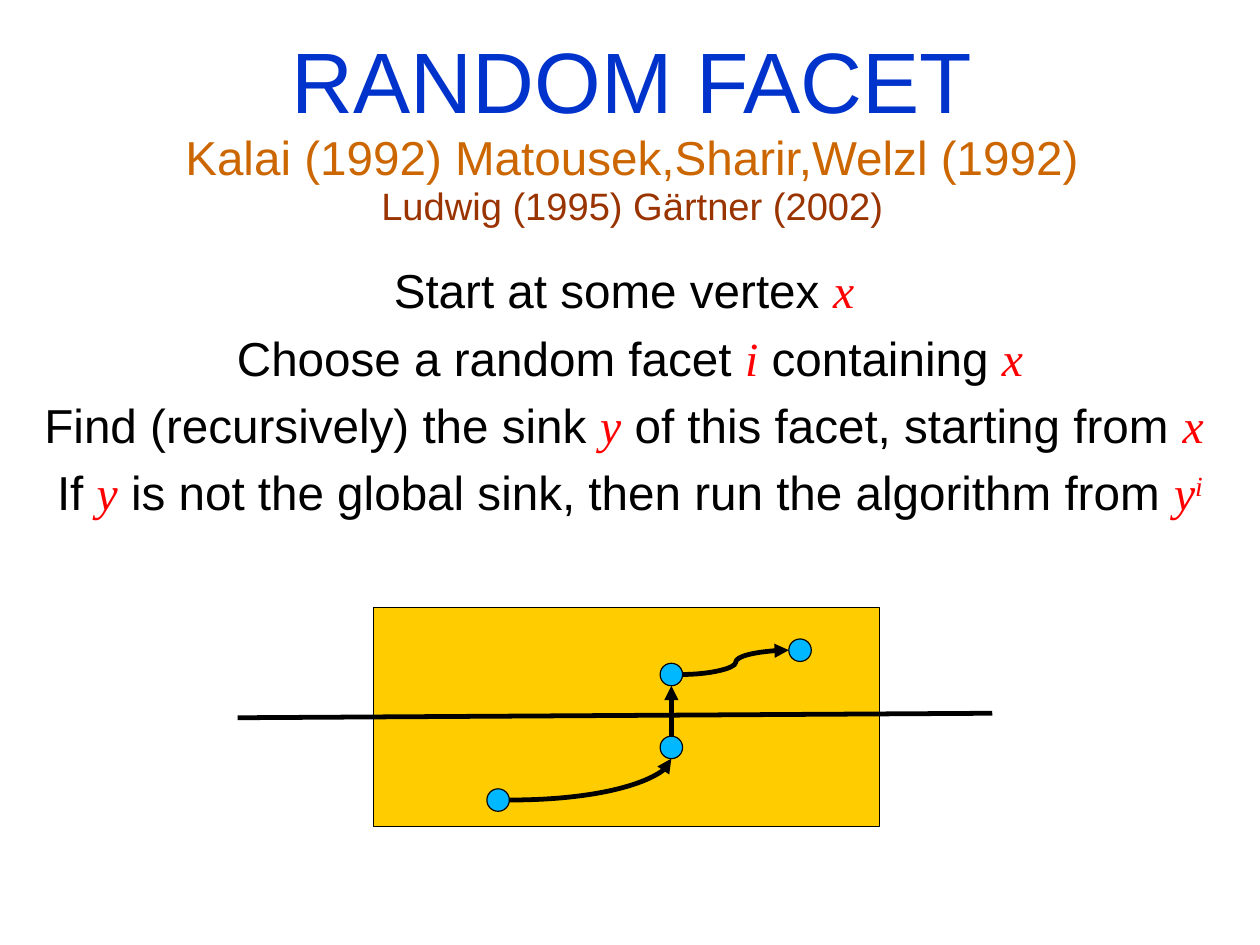
from copy import deepcopy
from dataclasses import dataclass

from lxml import etree
from pptx import Presentation
from pptx.dml.color import RGBColor
from pptx.enum.shapes import MSO_CONNECTOR, MSO_SHAPE
from pptx.enum.text import MSO_ANCHOR, MSO_AUTO_SIZE, PP_ALIGN
from pptx.oxml.ns import qn
from pptx.util import Cm, Pt

RECTANGLE, OVAL = MSO_SHAPE.RECTANGLE, MSO_SHAPE.OVAL
STRAIGHT, CURVE = MSO_CONNECTOR.STRAIGHT, MSO_CONNECTOR.CURVE
CENTER = PP_ALIGN.CENTER
TOP, MIDDLE = MSO_ANCHOR.TOP, MSO_ANCHOR.MIDDLE
NO_FIT = MSO_AUTO_SIZE.NONE

BLACK = RGBColor(0x00, 0x00, 0x00)
BLUE = RGBColor(0x00, 0x33, 0xCC)
ORANGE = RGBColor(0xCC, 0x66, 0x00)
BROWN = RGBColor(0x99, 0x33, 0x00)
RED = RGBColor(0xFF, 0x00, 0x00)
GOLD = RGBColor(0xFF, 0xCC, 0x00)
SKY = RGBColor(0x00, 0xB8, 0xFF)

SANS, SERIF = "Arial", "Times New Roman"
BODY_SIZE = 30
RADIUS = 0.25


@dataclass(frozen=True)
class Span:
    text: str
    size: float = BODY_SIZE
    color: RGBColor = BLACK
    variable: bool = False
    superscript: bool = False


@dataclass(frozen=True)
class Point:
    x: float
    y: float

    def moved(self, right: float = 0, down: float = 0) -> "Point":
        return Point(self.x + right, self.y + down)


@dataclass(frozen=True)
class Link:
    start: Point
    end: Point
    kind: int = STRAIGHT
    arrow: bool = True
    preset: str = ""


def variable(text: str, superscript: bool = False) -> Span:
    return Span(text, color=RED, variable=True, superscript=superscript)


TITLE_LINES = [
    Span("RANDOM FACET", 54, BLUE),
    Span("Kalai (1992) Matousek,Sharir,Welzl (1992)", 30, ORANGE),
    Span("Ludwig (1995) Gärtner (2002)", 24, BROWN),
]
STEPS = [
    [Span("Start at some vertex "), variable("x ")],
    [Span("Choose a random facet "), variable("i"),
     Span(" containing "), variable("x")],
    [Span("Find (recursively) the sink "), variable("y"),
     Span(" of this facet, starting from "), variable("x ")],
    [Span("If "), variable("y"),
     Span(" is not the global sink, then run the algorithm from "),
     variable("y"), variable("i", superscript=True)],
]

START = Point(11.07, 17.78)
FACET_SINK = Point(14.92, 16.61)
NEIGHBOUR = Point(14.92, 14.99)
GLOBAL_SINK = Point(17.78, 14.45)
VERTICES = [START, FACET_SINK, NEIGHBOUR, GLOBAL_SINK]

FACET_LINE = Link(Point(5.28, 15.95), Point(22.05, 15.85), arrow=False)
PATH_LINKS = [
    Link(START.moved(right=RADIUS), FACET_SINK.moved(down=RADIUS),
         CURVE, preset="curvedConnector2"),
    Link(FACET_SINK.moved(down=-RADIUS), NEIGHBOUR.moved(down=RADIUS)),
    Link(NEIGHBOUR.moved(right=RADIUS), GLOBAL_SINK.moved(right=-RADIUS), CURVE),
]


def place(box, left: float, top: float, width: float, height: float) -> None:
    box.left, box.top = Cm(left), Cm(top)
    box.width, box.height = Cm(width), Cm(height)


def add_span(para, span: Span):
    run = para.add_run()
    run.text = span.text
    run.font.name = SERIF if span.variable else SANS
    run.font.size = Pt(span.size)
    run.font.italic = span.variable
    run.font.color.rgb = span.color
    if span.superscript:
        run.font._element.set("baseline", "30000")
    return run


def fill_title(box) -> None:
    place(box, 1.45, 0.81, 25.2, 4.29)
    frame = box.text_frame
    frame.auto_size, frame.vertical_anchor, frame.word_wrap = NO_FIT, MIDDLE, True
    frame.margin_left = frame.margin_right = frame.margin_top = frame.margin_bottom = 0
    para = frame.paragraphs[0]
    para.alignment, para.line_spacing = CENTER, 0.93
    for number, line in enumerate(TITLE_LINES):
        if number:
            # A break takes the font of the line it ends
            para.add_line_break()
            para._p.findall(qn("a:br"))[-1].append(deepcopy(run.font._element))
        run = add_span(para, line)


def fill_steps(box) -> None:
    place(box, 0, 5.82, 28, 5.94)
    frame = box.text_frame
    frame.auto_size, frame.vertical_anchor, frame.word_wrap = NO_FIT, TOP, True
    for number, step in enumerate(STEPS):
        para = frame.add_paragraph() if number else frame.paragraphs[0]
        para.alignment, para.line_spacing = CENTER, 0.9
        para.space_before, para.space_after = Pt(10), Pt(0)
        properties = para._p.get_or_add_pPr()
        properties.set("marL", "0")
        properties.set("indent", "0")
        etree.SubElement(properties, qn("a:buNone"))
        for span in step:
            add_span(para, span)


def add_filled(page, kind: int, corner: Point, width: float, height: float,
               color: RGBColor) -> None:
    shape = page.shapes.add_shape(kind, Cm(corner.x), Cm(corner.y),
                                  Cm(width), Cm(height))
    shape.shadow.inherit = False
    shape.fill.solid()
    shape.fill.fore_color.rgb = color
    shape.line.color.rgb = BLACK
    shape.line.width = Pt(0.75)


def add_link(page, link: Link) -> None:
    connector = page.shapes.add_connector(
        link.kind, Cm(link.start.x), Cm(link.start.y), Cm(link.end.x), Cm(link.end.y))
    connector.line.color.rgb = BLACK
    connector.line.width = Pt(3)
    properties = connector._element.spPr
    if link.preset:
        properties.find(qn("a:prstGeom")).set("prst", link.preset)
    if link.arrow:
        etree.SubElement(properties.find(qn("a:ln")), qn("a:tailEnd"), type="triangle")
    etree.SubElement(properties, qn("a:effectLst"))


def main() -> None:
    deck = Presentation()
    deck.slide_width, deck.slide_height = Cm(28), Cm(21)
    page = deck.slides.add_slide(deck.slide_layouts[1])

    # Heading and algorithm steps
    fill_title(page.shapes.title)
    fill_steps(page.placeholders[1])

    # Cube cut by the facet line
    add_filled(page, RECTANGLE, Point(8.31, 13.51), 11.23, 4.85, GOLD)
    add_link(page, FACET_LINE)

    # Vertices and the path between them
    for vertex in VERTICES:
        add_filled(page, OVAL, vertex.moved(-RADIUS, -RADIUS),
                   2 * RADIUS, 2 * RADIUS, SKY)
    for link in PATH_LINKS:
        add_link(page, link)

    deck.save("out.pptx")


if __name__ == "__main__":
    main()
